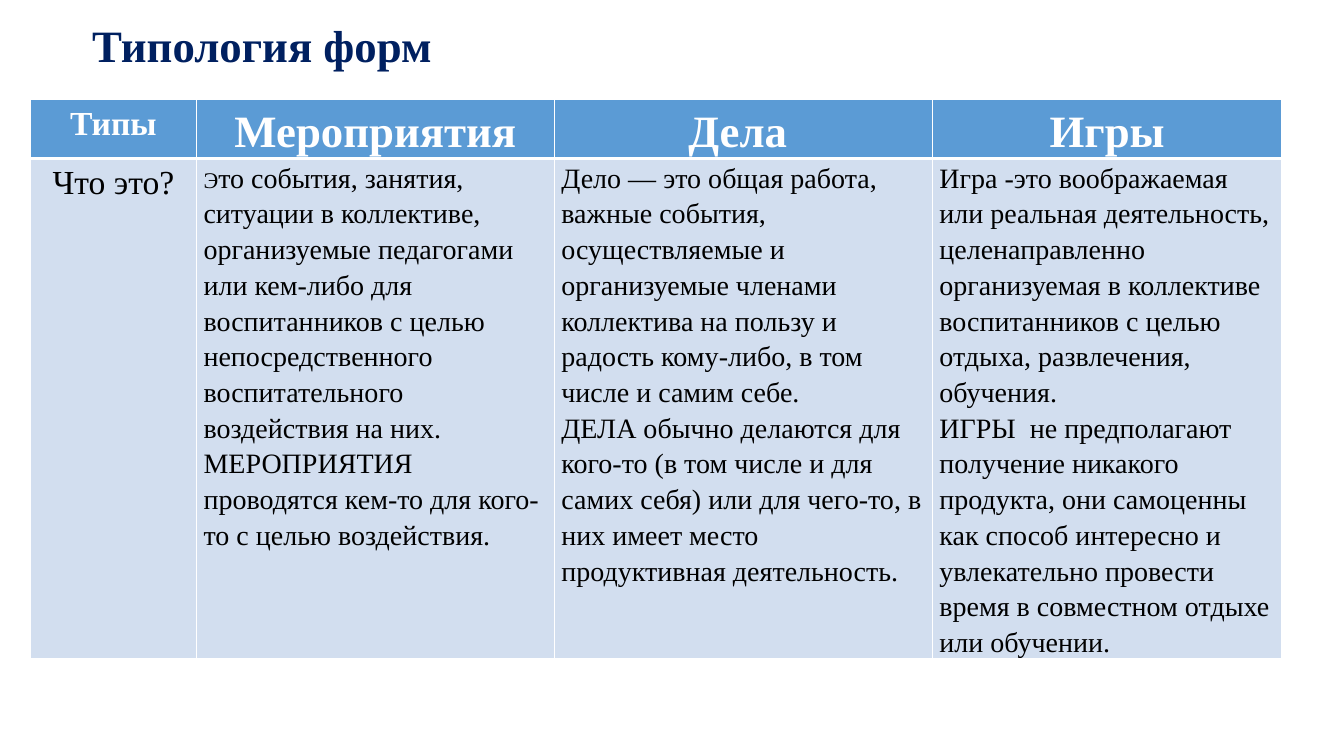
"""Builds a slide with a table comparing three types of educational forms."""
import pptx
import pptx.dml.color
import pptx.enum.text
import pptx.oxml
import pptx.oxml.ns
import pptx.util

Pt = pptx.util.Pt
ALIGN = pptx.enum.text.PP_ALIGN

TITLE = "Типология форм"
HEADERS = [("Типы", "label"), ("Мероприятия", "heading"), ("Дела ", "heading"), ("Игры", "heading")]
QUESTION = "Что это?"
DESCRIPTIONS = [
    [
        [("Э", "small"), ("то события, занятия, ситуации в коллективе, организуемые педагогами или кем-либо "
                          "для воспитанников с целью непосредственного воспитательного воздействия на них.", "body")],
        [("МЕРОПРИЯТИЯ проводятся кем-то для кого-то с целью воздействия.", "body")],
    ],
    [
        [("Дело — это общая работа, важные события, осуществляемые и организуемые членами коллектива "
          "на пользу и радость кому-либо, в том числе и самим себе.", "body")],
        [("ДЕЛА обычно делаются для кого-то (в том числе и для самих себя) или для чего-то, "
          "в них имеет место продуктивная деятельность.", "body")],
    ],
    [
        [("Игра -это воображаемая или реальная деятельность, целенаправленно организуемая в коллективе "
          "воспитанников с целью отдыха, развлечения, обучения.", "body")],
        [("ИГРЫ  не предполагают получение никакого продукта, они самоценны как способ интересно "
          "и увлекательно провести время в совместном отдыхе или обучении.", "body")],
    ],
]

THEME = {
    "font": "Times New Roman",
    "sizes": {"title": 32, "heading": 32, "label": 24, "body": 20, "small": 16},
    "title": "002060", "header_text": "FFFFFF", "body_text": "000000",
    "header_fill": "5B9BD5", "body_fill": "D2DEEF", "border": "FFFFFF",
}
SLIDE_SIZE = (960, 540)
TITLE_BOX = (21.6, 9.4, 331.2, 46)
TABLE_ORIGIN = (21.6, 71.3)
COLUMN_WIDTHS = [118.8, 255.6, 270, 249.8]
ROW_HEIGHTS = [42, 356]
LINE_SPACING = 1.15
CELL_MARGINS = {"margin_left": 5, "margin_right": 5, "margin_top": 0, "margin_bottom": 0}
THIN, THICK = 1, 3


def color(name):
    return pptx.dml.color.RGBColor.from_string(THEME[name])


def write(frame, paragraphs, text_color, bold, align, spacing):
    for index, spans in enumerate(paragraphs):
        para = frame.paragraphs[0] if index == 0 else frame.add_paragraph()
        for name, value in {"alignment": align, "line_spacing": spacing}.items():
            setattr(para, name, value)
        for text, size in spans:
            span = para.add_run()
            span.text = text
            values = {"name": THEME["font"], "size": Pt(THEME["sizes"][size]), "bold": bold}
            for name, value in values.items():
                setattr(span.font, name, value)
            span.font.color.rgb = color(text_color)


def add_borders(cell, widths):
    properties = cell._tc.get_or_add_tcPr()
    for side, width in widths.items():
        properties.append(pptx.oxml.parse_xml(
            f'<a:ln{side} {pptx.oxml.ns.nsdecls("a")} w="{Pt(width)}"><a:solidFill>'
            f'<a:srgbClr val="{THEME["border"]}"/></a:solidFill></a:ln{side}>'))


def add_title(slide):
    box = slide.shapes.add_textbox(*map(Pt, TITLE_BOX))
    box.text_frame.word_wrap = True
    write(box.text_frame, [[(TITLE, "title")]], "title", True, ALIGN.CENTER, None)


def add_types_table(slide):
    rows = [[[[header]] for header in HEADERS], [[[(QUESTION, "label")]], *DESCRIPTIONS]]
    extent = (sum(COLUMN_WIDTHS), sum(ROW_HEIGHTS))
    table = slide.shapes.add_table(len(rows), len(HEADERS), *map(Pt, TABLE_ORIGIN + extent)).table
    for column, width in zip(table.columns, COLUMN_WIDTHS):
        column.width = Pt(width)
    for row_index, (row, height, contents) in enumerate(zip(table.rows, ROW_HEIGHTS, rows)):
        row.height = Pt(height)
        header = row_index == 0
        kind = "header" if header else "body"
        borders = {"L": THIN, "R": THIN, "T": THIN if header else THICK, "B": THICK if header else THIN}
        for column_index, (cell, paragraphs) in enumerate(zip(row.cells, contents)):
            for name, value in CELL_MARGINS.items():
                setattr(cell, name, Pt(value))
            add_borders(cell, borders)
            cell.fill.solid()
            cell.fill.fore_color.rgb = color(f"{kind}_fill")
            align = ALIGN.CENTER if header or column_index == 0 else ALIGN.LEFT
            write(cell.text_frame, paragraphs, f"{kind}_text", header, align, LINE_SPACING)


def main():
    deck = pptx.Presentation()
    deck.slide_width, deck.slide_height = map(Pt, SLIDE_SIZE)
    slide = deck.slides.add_slide(deck.slide_layouts[6])
    add_types_table(slide)
    add_title(slide)
    deck.save("out.pptx")


if __name__ == "__main__":
    main()
